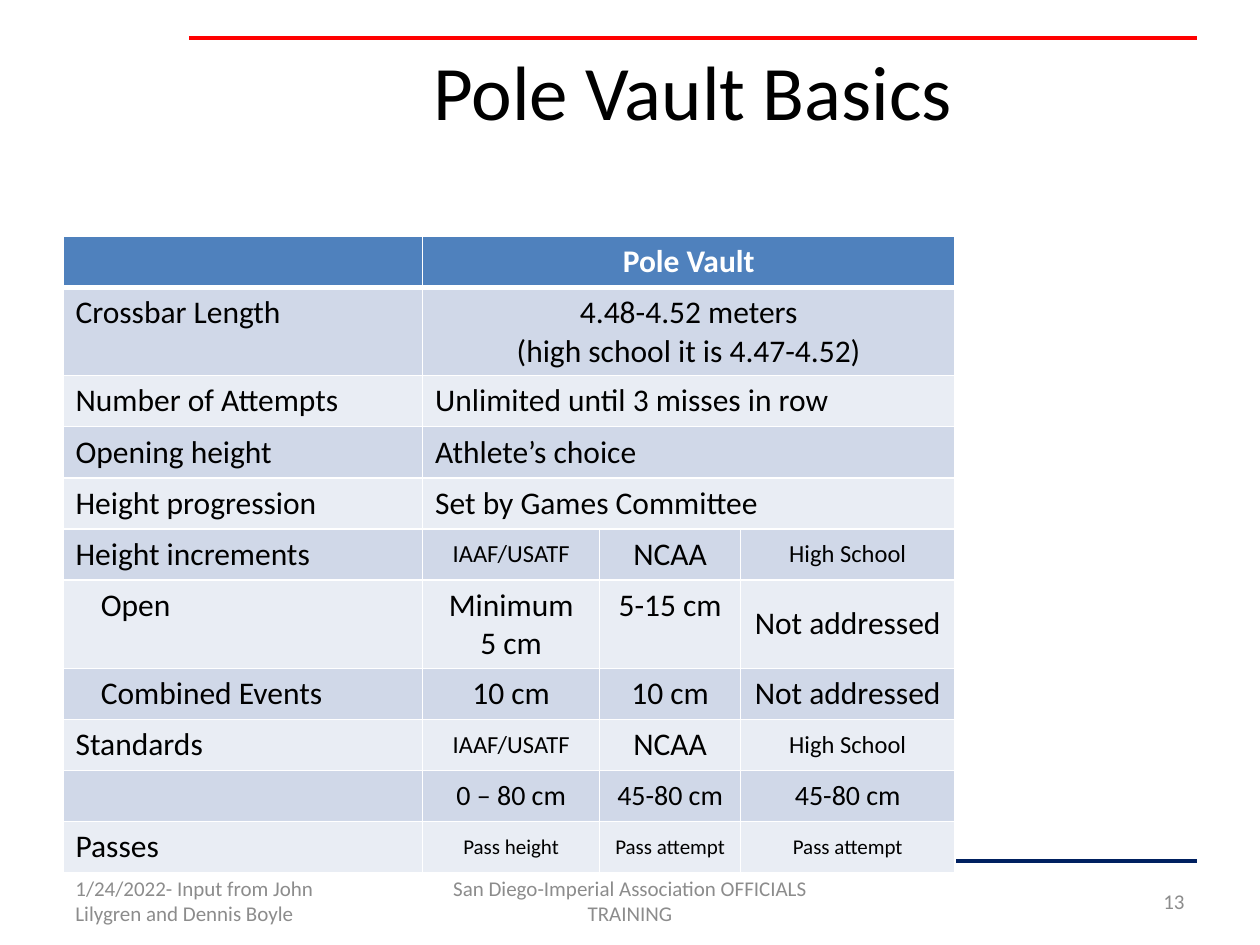
from lxml import etree
from pptx import Presentation
from pptx.dml.color import RGBColor
from pptx.enum.shapes import MSO_CONNECTOR
from pptx.enum.text import MSO_ANCHOR, PP_ALIGN
from pptx.oxml.ns import qn
from pptx.util import Pt

LEFT, CENTER, RIGHT = PP_ALIGN.LEFT, PP_ALIGN.CENTER, PP_ALIGN.RIGHT
TOP, MIDDLE = MSO_ANCHOR.TOP, MSO_ANCHOR.MIDDLE
STRAIGHT = MSO_CONNECTOR.STRAIGHT
COLORS = {
    "red": "FF0000", "navy": "002060", "black": "000000", "white": "FFFFFF",
    "gray": "8C8C8C", "header": "4F81BD", "dark band": "D0D8E8", "light band": "E9EDF4",
}


def write(frame, text, size, color, align, bold=False, indent=0):
    for index, line in enumerate(text.split("\n")):
        para = frame.paragraphs[0] if index == 0 else frame.add_paragraph()
        para.alignment = align
        if indent:
            properties = para._p.get_or_add_pPr()
            properties.set("marL", str(Pt(indent)))
            properties.set("indent", "0")
        span = para.add_run()
        span.text = line
        span.font.name = "Calibri"
        span.font.size = Pt(size)
        span.font.bold = bold
        span.font.color.rgb = RGBColor.from_string(COLORS[color])


def set_borders(cell, bottom_width, top_width):
    properties = cell._tc.get_or_add_tcPr()
    widths = {"lnL": 1, "lnR": 1, "lnT": top_width, "lnB": bottom_width}
    for index, (side, width) in enumerate(widths.items()):
        border = etree.Element(qn("a:" + side), w=str(Pt(width)))
        fill = etree.SubElement(border, qn("a:solidFill"))
        etree.SubElement(fill, qn("a:srgbClr"), val=COLORS["white"])
        properties.insert(index, border)


deck = Presentation()
deck.slide_width, deck.slide_height = Pt(720), Pt(540)
page = deck.slides.add_slide(deck.slide_layouts[6])

for start, y, color in [(108, 21.6, "red"), (36, 491.76, "navy")]:
    rule = page.shapes.add_connector(STRAIGHT, Pt(start), Pt(y), Pt(684), Pt(y))
    rule.line.color.rgb = RGBColor.from_string(COLORS[color])
    rule.line.width = Pt(2.25)
    etree.SubElement(rule._element.spPr, qn("a:effectLst"))

text_boxes = [
    ("Pole Vault Basics", 108, 21.6, 576, 90, 44, "black", CENTER, TOP),
    ("San Diego-Imperial Association OFFICIALS TRAINING",
     246, 500.5, 228, 28.75, 12, "gray", CENTER, MIDDLE),
    ("13", 516, 500.5, 168, 28.75, 12, "gray", RIGHT, MIDDLE),
    ("1/24/2022- Input from John Lilygren and Dennis Boyle",
     36, 500.5, 168, 28.75, 12, "gray", LEFT, MIDDLE),
]
for text, left, top, width, height, size, color, align, anchor in text_boxes:
    box = page.shapes.add_textbox(Pt(left), Pt(top), Pt(width), Pt(height))
    box.text_frame.word_wrap = True
    box.text_frame.vertical_anchor = anchor
    write(box.text_frame, text, size, color, align)

organizations = [("IAAF/USATF", 14, MIDDLE), ("NCAA", 18, TOP), ("High School", 14, MIDDLE)]
table_rows = [
    ("", 0, [("Pole Vault", 18, TOP)], CENTER),
    ("Crossbar Length", 0, [("4.48-4.52 meters\n(high school it is 4.47-4.52)", 18, TOP)], CENTER),
    ("Number of Attempts", 0, [("Unlimited until 3 misses in row", 18, TOP)], LEFT),
    ("Opening height", 0, [("Athlete’s choice", 18, TOP)], LEFT),
    ("Height progression", 0, [("Set by Games Committee", 18, TOP)], LEFT),
    ("Height increments", 0, organizations, CENTER),
    ("Open", 14.4, [("Minimum\n5 cm", 18, TOP), ("5-15 cm", 18, TOP),
                    ("Not addressed", 18, MIDDLE)], CENTER),
    ("Combined Events", 14.4, [("10 cm", 18, TOP), ("10 cm", 18, TOP),
                               ("Not addressed", 18, TOP)], CENTER),
    ("Standards", 0, organizations, CENTER),
    ("", 0, [("0 – 80 cm", 16, MIDDLE), ("45-80 cm", 16, MIDDLE),
             ("45-80 cm", 16, MIDDLE)], CENTER),
    ("Passes", 0, [("Pass height", 12, MIDDLE), ("Pass attempt", 12, MIDDLE),
                   ("Pass attempt", 12, MIDDLE)], CENTER),
]
column_widths = [205.5, 101.25, 80.5, 122.5]
row_height = 29.2
table = page.shapes.add_table(
    len(table_rows), len(column_widths), Pt(36), Pt(135),
    Pt(sum(column_widths)), Pt(row_height * len(table_rows)),
).table
table.horz_banding = False
for column, width in zip(table.columns, column_widths):
    column.width = Pt(width)

for row, (label, indent, values, align) in enumerate(table_rows):
    table.rows[row].height = Pt(row_height)
    is_header = row == 0
    band = "header" if is_header else ("dark band" if row % 2 else "light band")
    ink = "white" if is_header else "black"
    for column in range(len(column_widths)):
        cell = table.cell(row, column)
        cell.fill.solid()
        cell.fill.fore_color.rgb = RGBColor.from_string(COLORS[band])
        set_borders(cell, 3 if is_header else 1, 3 if row == 1 else 1)
    if len(values) == 1:
        table.cell(row, 1).merge(table.cell(row, 3))
    if label:
        write(table.cell(row, 0).text_frame, label, 18, ink, LEFT, indent=indent)
    for column, (text, size, anchor) in enumerate(values, 1):
        cell = table.cell(row, column)
        cell.vertical_anchor = anchor
        write(cell.text_frame, text, size, ink, align, bold=is_header)

deck.save("out.pptx")
